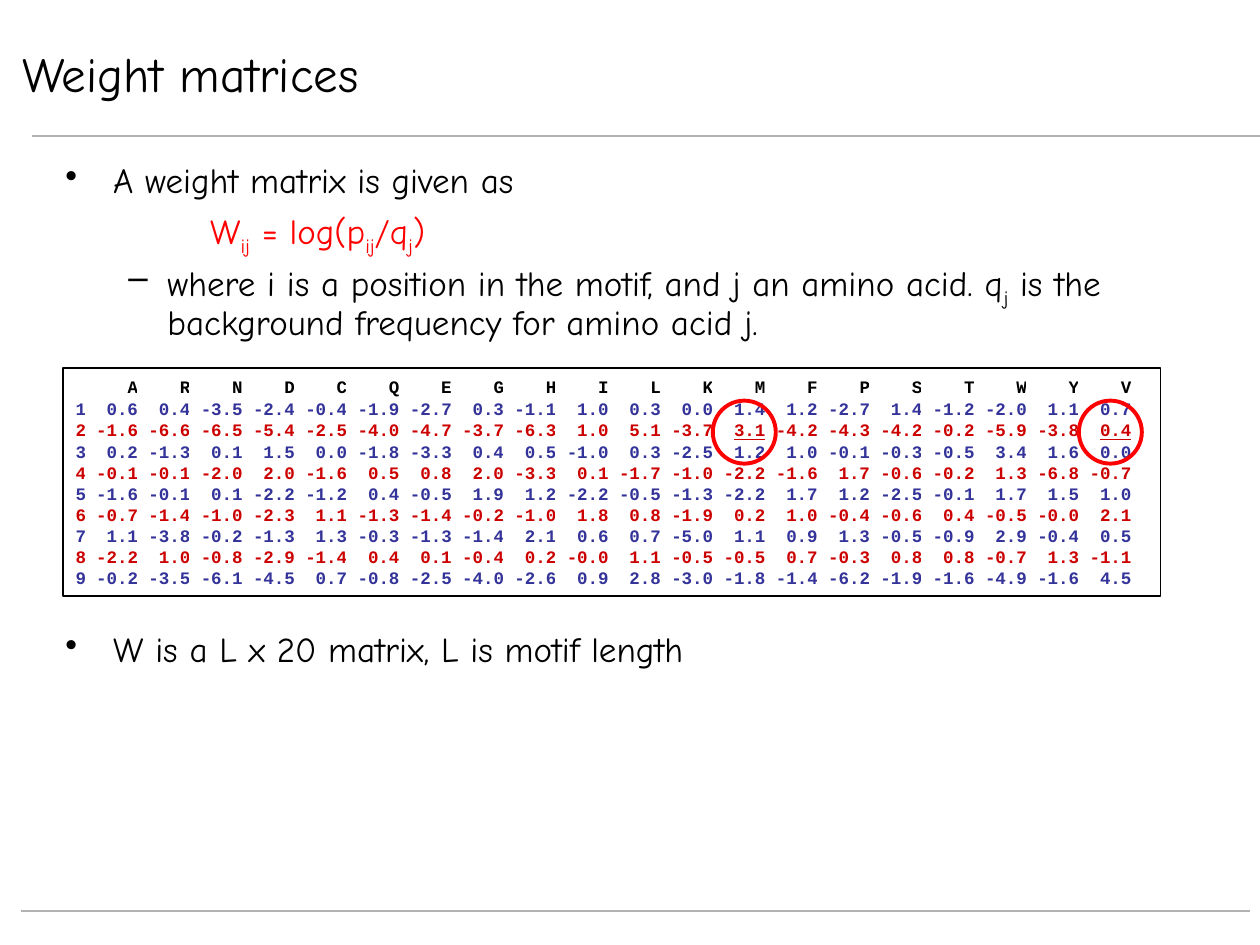
from dataclasses import dataclass
from itertools import cycle
from typing import NamedTuple

from lxml import etree
from pptx import Presentation, util as u
from pptx.dml.color import RGBColor
from pptx.enum import shapes, text
from pptx.oxml.ns import qn

WIDTH, HEIGHT = 10, 7.5


@dataclass(frozen=True)
class Theme:
    body_font: str = "Comic Neue"
    matrix_font: str = "Courier New"
    title_size: int = 28
    body_size: int = 20
    matrix_size: int = 10
    ink: str = "000000"
    paper: str = "FFFFFF"
    rule: str = "B2B2B2"
    accent: str = "FF0000"
    odd_row: str = "333399"
    even_row: str = "CC0000"


class Box(NamedTuple):
    left: float
    top: float
    width: float
    height: float

    def emu(self) -> list:
        return [u.Inches(length) for length in self]


class Piece(NamedTuple):
    words: str
    lowered: bool = False


class Point(NamedTuple):
    pieces: list
    margin: float
    hang: float = 0
    bullet: str = ""
    color: str = Theme.ink


class Grid(NamedTuple):
    left: float
    top: float
    label_width: float
    column: float
    header: float
    row: float

    def cell_center(self, row: int, column: int) -> tuple:
        x = self.left + self.label_width + (column + 0.5) * self.column
        y = self.top + self.header + (row + 0.5) * self.row
        return x, y


THEME = Theme()
GRID = Grid(left=0.6, top=3, label_width=0.08, column=0.415, header=0.18, row=1 / 6)
FRAME = Box(0.5, 2.92, 8.71, 1.81)
RING = 0.5
RING_SHIFT = 0.04
MARKED_ROW = 1
MARKED = "MV"
RULES = [(0.25, 1.08, WIDTH), (0.17, 7.23, 9.92)]
AMINO_ACIDS = "ARNDCQEGHILKMFPSTWYV"
WEIGHTS = [
    "0.6 0.4 -3.5 -2.4 -0.4 -1.9 -2.7 0.3 -1.1 1.0 0.3 0.0 1.4 1.2 -2.7 1.4 -1.2 -2.0 1.1 0.7",
    "-1.6 -6.6 -6.5 -5.4 -2.5 -4.0 -4.7 -3.7 -6.3 1.0 5.1 -3.7 3.1 -4.2 -4.3 -4.2 -0.2 -5.9 -3.8 0.4",
    "0.2 -1.3 0.1 1.5 0.0 -1.8 -3.3 0.4 0.5 -1.0 0.3 -2.5 1.2 1.0 -0.1 -0.3 -0.5 3.4 1.6 0.0",
    "-0.1 -0.1 -2.0 2.0 -1.6 0.5 0.8 2.0 -3.3 0.1 -1.7 -1.0 -2.2 -1.6 1.7 -0.6 -0.2 1.3 -6.8 -0.7",
    "-1.6 -0.1 0.1 -2.2 -1.2 0.4 -0.5 1.9 1.2 -2.2 -0.5 -1.3 -2.2 1.7 1.2 -2.5 -0.1 1.7 1.5 1.0",
    "-0.7 -1.4 -1.0 -2.3 1.1 -1.3 -1.4 -0.2 -1.0 1.8 0.8 -1.9 0.2 1.0 -0.4 -0.6 0.4 -0.5 -0.0 2.1",
    "1.1 -3.8 -0.2 -1.3 1.3 -0.3 -1.3 -1.4 2.1 0.6 0.7 -5.0 1.1 0.9 1.3 -0.5 -0.9 2.9 -0.4 0.5",
    "-2.2 1.0 -0.8 -2.9 -1.4 0.4 0.1 -0.4 0.2 -0.0 1.1 -0.5 -0.5 0.7 -0.3 0.8 0.8 -0.7 1.3 -1.1",
    "-0.2 -3.5 -6.1 -4.5 0.7 -0.8 -2.5 -4.0 -2.6 0.9 2.8 -3.0 -1.8 -1.4 -6.2 -1.9 -1.6 -4.9 -1.6 4.5",
]

DEFINITION = [
    Point([Piece("A weight matrix is given as")], 0.38, -0.38, "•"),
    Point([Piece("W"), Piece("ij", True), Piece(" = log(p"), Piece("ij", True),
           Piece("/q"), Piece("j", True), Piece(")")], 1.15, color=THEME.accent),
    Point([Piece("where i is a position in the motif, and j an amino acid. q"),
           Piece("j", True),
           Piece(" is the background frequency for amino acid j.")], 0.81, -0.31, "–"),
]
DIMENSIONS = [Point([Piece("W is a L x 20 matrix, L is motif length")], 0.38, -0.38, "•")]


def apply(target, formats: dict) -> None:
    for name, value in formats.items():
        setattr(target, name, value)


def style_font(font, name: str, size: int, color: str, **extra) -> None:
    apply(font, {"name": name, "size": u.Pt(size), **extra})
    font.color.rgb = RGBColor.from_string(color)


def draw_title(slide, words: str, box: Box) -> None:
    title = slide.shapes.title
    apply(title, dict(zip(("left", "top", "width", "height"), box.emu())))
    frame = title.text_frame
    frame.text = words
    apply(frame, {"vertical_anchor": text.MSO_ANCHOR.MIDDLE, "word_wrap": True,
                  "auto_size": text.MSO_AUTO_SIZE.NONE})
    frame.paragraphs[0].alignment = text.PP_ALIGN.LEFT
    style_font(frame.paragraphs[0].runs[0].font, THEME.body_font, THEME.title_size, THEME.ink)


def draw_rule(slide, left: float, top: float, right: float) -> None:
    ends = [u.Inches(length) for length in (left, top, right, top)]
    rule = slide.shapes.add_connector(shapes.MSO_CONNECTOR.STRAIGHT, *ends)
    rule.line.width = u.Pt(1.5)
    rule.line.color.rgb = RGBColor.from_string(THEME.rule)
    etree.SubElement(rule._element.spPr, qn("a:effectLst"))


def draw_points(slide, points: list, box: Box) -> None:
    frame = slide.shapes.add_textbox(*box.emu()).text_frame
    frame.word_wrap = True
    for index, point in enumerate(points):
        paragraph = frame.add_paragraph() if index else frame.paragraphs[0]
        apply(paragraph, {"line_spacing": 0.9, "space_before": u.Pt(5 if index else 0)})
        layout = paragraph._p.get_or_add_pPr()
        layout.set("marL", str(u.Inches(point.margin)))
        layout.set("indent", str(u.Inches(point.hang)))
        if point.bullet:
            etree.SubElement(layout, qn("a:buChar")).set("char", point.bullet)
        for piece in point.pieces:
            run = paragraph.add_run()
            run.text = piece.words
            style_font(run.font, THEME.body_font, THEME.body_size, point.color)
            if piece.lowered:
                run._r.get_or_add_rPr().set("baseline", "-25000")


def draw_outline(slide, preset, box: Box, color: str, weight: float) -> None:
    outline = slide.shapes.add_shape(preset, *box.emu())
    outline.shadow.inherit = False
    outline.fill.background()
    outline.line.width = u.Pt(weight)
    outline.line.color.rgb = RGBColor.from_string(color)


def fill_cell(cell, words: str, color: str, marked: bool) -> None:
    apply(cell, dict.fromkeys(("margin_left", "margin_right", "margin_top", "margin_bottom"), 0))
    cell.vertical_anchor = text.MSO_ANCHOR.MIDDLE
    cell.fill.background()
    paragraph = cell.text_frame.paragraphs[0]
    paragraph.alignment = text.PP_ALIGN.RIGHT
    if words:
        run = paragraph.add_run()
        run.text = words
        style_font(run.font, THEME.matrix_font, THEME.matrix_size, color,
                   bold=True, underline=marked)
    else:
        paragraph._p.get_or_add_endParaRPr().set("sz", str(THEME.matrix_size * 100))


def draw_matrix(slide, grid: Grid) -> None:
    rows = [["", *AMINO_ACIDS]] + [[str(n), *row.split()] for n, row in enumerate(WEIGHTS, 1)]
    widths = [grid.label_width] + [grid.column] * len(AMINO_ACIDS)
    heights = [grid.header] + [grid.row] * len(WEIGHTS)
    box = Box(grid.left, grid.top, sum(widths), sum(heights))
    matrix = slide.shapes.add_table(len(rows), len(widths), *box.emu()).table
    apply(matrix, {"first_row": False, "horz_banding": False})
    for column, width in zip(matrix.columns, widths):
        column.width = u.Inches(width)
    stripes = cycle((THEME.odd_row, THEME.even_row))
    for r, (row, height) in enumerate(zip(rows, heights)):
        matrix.rows[r].height = u.Inches(height)
        color = next(stripes) if r else THEME.ink
        for c, words in enumerate(row):
            marked = r == MARKED_ROW + 1 and c > 0 and AMINO_ACIDS[c - 1] in MARKED
            fill_cell(matrix.cell(r, c), words, color, marked)


def main() -> None:
    deck = Presentation()
    apply(deck, {"slide_width": u.Inches(WIDTH), "slide_height": u.Inches(HEIGHT)})
    slide = deck.slides.add_slide(deck.slide_layouts[5])
    slide.background.fill.solid()
    slide.background.fill.fore_color.rgb = RGBColor.from_string(THEME.paper)
    for rule in RULES:
        draw_rule(slide, *rule)
    draw_title(slide, "Weight matrices", Box(0.08, 0.33, 7.83, 0.5))
    draw_points(slide, DEFINITION, Box(0.42, 1.25, 9.42, 1.5))
    draw_points(slide, DIMENSIONS, Box(0.42, 4.97, 9.42, 0.5))
    draw_outline(slide, shapes.MSO_SHAPE.RECTANGLE, FRAME, THEME.ink, 0.75)
    draw_matrix(slide, GRID)
    for amino_acid in MARKED:
        x, y = GRID.cell_center(MARKED_ROW, AMINO_ACIDS.index(amino_acid))
        ring = Box(x - RING / 2 + RING_SHIFT, y - RING / 2, RING, RING)
        draw_outline(slide, shapes.MSO_SHAPE.OVAL, ring, THEME.accent, 2.25)
    deck.save("out.pptx")


if __name__ == "__main__":
    main()
